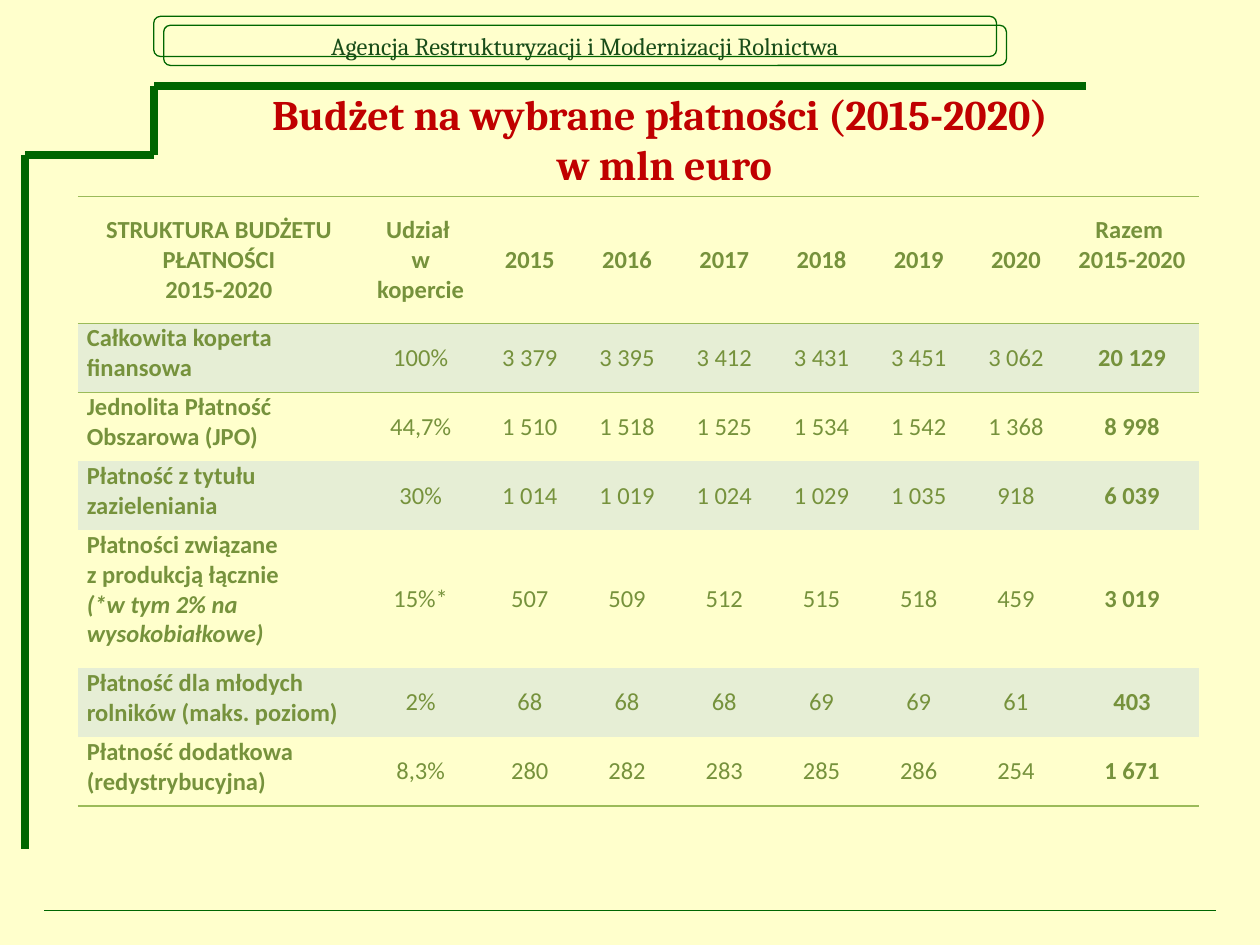
from lxml import etree
from pptx import Presentation
from pptx import util as u
from pptx.dml.color import RGBColor
from pptx.enum import shapes, text
from pptx.oxml.ns import qn

AGENCY = "Agencja Restrukturyzacji i Modernizacji Rolnictwa"
TITLE = "Budżet na wybrane płatności (2015-2020) \vw mln euro"
HEADER = ["STRUKTURA BUDŻETU PŁATNOŚCI\n2015-2020", "Udział \vw kopercie",
          "2015", "2016", "2017", "2018", "2019", "2020", "Razem \v2015-2020"]
BUDGET = [
    ["Całkowita koperta finansowa", "100%",
     "3 379", "3 395", "3 412", "3 431", "3 451", "3 062", "20 129"],
    ["Jednolita Płatność Obszarowa (JPO)", "44,7%",
     "1 510", "1 518", "1 525", "1 534", "1 542", "1 368", "8 998"],
    ["Płatność z tytułu zazieleniania", "30%",
     "1 014", "1 019", "1 024", "1 029", "1 035", "918", "6 039"],
    ["Płatności związane \vz produkcją łącznie\n(*w tym 2% na wysokobiałkowe)", "15%*",
     "507", "509", "512", "515", "518", "459", "3 019"],
    ["Płatność dla młodych rolników (maks. poziom)", "2%",
     "68", "68", "68", "69", "69", "61", "403"],
    ["Płatność dodatkowa (redystrybucyjna)", "8,3%",
     "280", "282", "283", "285", "286", "254", "1 671"],
]
COL_WIDTHS = [5.69, 2.44] + [1.96] * 6 + [2.72]
ROW_HEIGHTS = [2.56, 1.39, 1.39, 1.39, 2.78, 1.39, 1.39]
FRAME_PATH = [(21.89, 1.73), (3.1, 1.73), (3.1, 3.12), (0.51, 3.12), (0.51, 17.12)]
FOOTER_LINE = [(0.89, 18.34), (24.51, 18.34)]
BADGES = [(3.1, 0.33), (3.3, 0.51)]

THEME = {
    "bg": "FFFFCC", "frame": "006600", "agency": "194D19", "title": "C00000",
    "table": "76923C", "band": "E6EED5", "rule": "9BBB59",
    "heading_font": "Cambria", "table_font": "Calibri",
    "title_size": 24, "text_size": 14,
    "frame_width": 4.5, "badge_width": 0.75, "footer_width": 0.25, "rule_width": 1,
}
NO_STYLE = "{2D5ABB26-0587-4C30-8999-92F81FD0307C}"


def rgb(name):
    return RGBColor.from_string(THEME[name])


def write(tf, content, color, font, size, bold=False, align=text.PP_ALIGN.CENTER):
    for i, line in enumerate(content.split("\n")):
        p = tf.paragraphs[0] if i == 0 else tf.add_paragraph()
        p.alignment = align
        for j, part in enumerate(line.split("\v")):
            if j:
                p.add_line_break()
            r = p.add_run()
            r.text = part
            r.font.name = THEME[font]
            r.font.size = u.Pt(THEME[size])
            r.font.color.rgb = rgb(color)
            r.font.bold = bold
            r.font.italic = line.startswith("(*")


def draw_path(s, points, width):
    for start, end in zip(points, points[1:]):
        ends = [u.Cm(v) for v in start + end]
        line = s.shapes.add_connector(shapes.MSO_CONNECTOR.STRAIGHT, *ends)
        line.line.color.rgb = rgb("frame")
        line.line.width = u.Pt(THEME[width])
        etree.SubElement(line._element.spPr, qn("a:effectLst"))


def add_badge(s, left, top):
    sp = s.shapes.add_shape(shapes.MSO_SHAPE.ROUNDED_RECTANGLE,
                            u.Cm(left), u.Cm(top), u.Cm(16.99), u.Cm(0.81))
    sp.shadow.inherit = False
    sp.fill.background()
    sp.line.color.rgb = rgb("frame")
    sp.line.width = u.Pt(THEME["badge_width"])
    return sp


def add_border(cell, tag):
    ln = etree.Element(qn(tag), w=str(u.Pt(THEME["rule_width"])))
    fill = etree.SubElement(ln, qn("a:solidFill"))
    etree.SubElement(fill, qn("a:srgbClr"), val=THEME["rule"])
    cell._tc.get_or_add_tcPr().insert(0, ln)


def add_budget_table(s):
    rows = [HEADER] + BUDGET
    last_row, last_col = len(rows) - 1, len(HEADER) - 1
    frame = s.shapes.add_table(len(rows), len(HEADER), u.Cm(1.57), u.Cm(3.96),
                               u.Cm(sum(COL_WIDTHS)), u.Cm(sum(ROW_HEIGHTS)))
    table = frame.table
    table.first_row = table.horz_banding = False
    table._tbl.tblPr.find(qn("a:tableStyleId")).text = NO_STYLE
    for column, width in zip(table.columns, COL_WIDTHS):
        column.width = u.Cm(width)
    for row, height in zip(table.rows, ROW_HEIGHTS):
        row.height = u.Cm(height)

    for i, values in enumerate(rows):
        for j, value in enumerate(values):
            cell = table.cell(i, j)
            label = i > 0 and j == 0
            cell.margin_left = cell.margin_right = u.Cm(0.18)
            cell.margin_top = cell.margin_bottom = 0
            cell.vertical_anchor = text.MSO_ANCHOR.TOP if label else text.MSO_ANCHOR.MIDDLE
            if i % 2:
                cell.fill.solid()
                cell.fill.fore_color.rgb = rgb("band")
            else:
                cell.fill.background()
            if i in (0, last_row):
                add_border(cell, "a:lnB")
            if i in (0, 1):
                add_border(cell, "a:lnT")
            write(cell.text_frame, value, "table", "table_font", "text_size",
                  bold=i == 0 or j in (0, last_col),
                  align=text.PP_ALIGN.LEFT if label else text.PP_ALIGN.CENTER)
    table.cell(0, last_col).margin_bottom = u.Cm(0.6)


def main():
    prs = Presentation()
    prs.slide_width, prs.slide_height = u.Cm(25.4), u.Cm(19.05)
    s = prs.slides.add_slide(prs.slide_layouts[6])
    s.background.fill.solid()
    s.background.fill.fore_color.rgb = rgb("bg")

    draw_path(s, FRAME_PATH, "frame_width")
    draw_path(s, FOOTER_LINE, "footer_width")
    badges = [add_badge(s, *place) for place in BADGES]
    tf = badges[-1].text_frame
    tf.word_wrap = False
    tf.vertical_anchor = text.MSO_ANCHOR.MIDDLE
    write(tf, AGENCY, "agency", "heading_font", "text_size")

    title = s.shapes.add_textbox(u.Cm(3.3), u.Cm(1.73), u.Cm(20.19), u.Cm(2.64))
    tf = title.text_frame
    tf.word_wrap = True
    tf.vertical_anchor = text.MSO_ANCHOR.MIDDLE
    tf.margin_bottom = u.Cm(0.63)
    write(tf, TITLE, "title", "heading_font", "title_size", bold=True)

    add_budget_table(s)
    prs.save("out.pptx")


if __name__ == "__main__":
    main()
